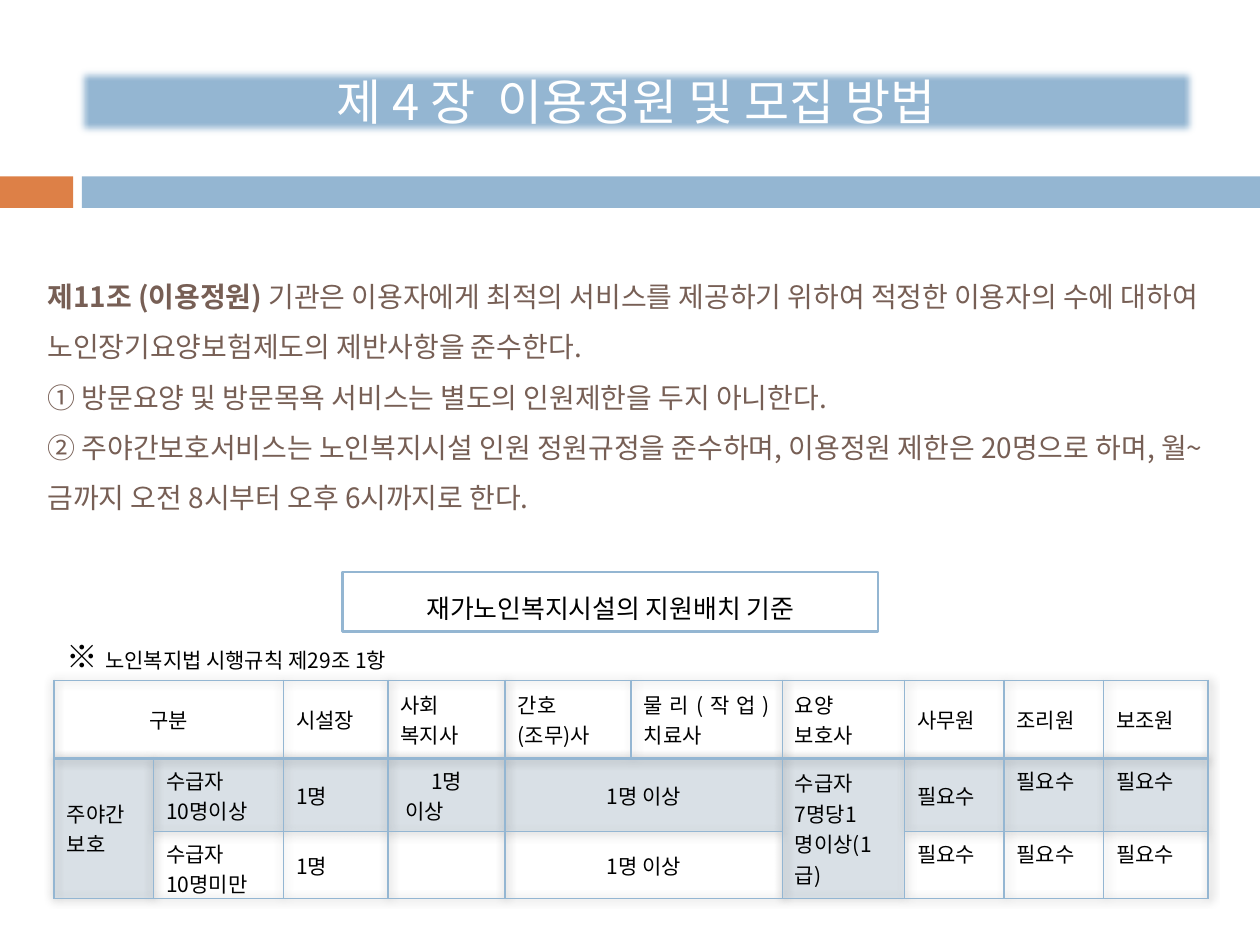
from lxml import etree
from pptx import Presentation
from pptx import util as u
from pptx.dml.color import RGBColor
from pptx.enum import shapes, text
from pptx.oxml.ns import qn

BLUE = RGBColor(0x94, 0xB6, 0xD2)
ORANGE = RGBColor(0xDD, 0x80, 0x47)
BROWN = RGBColor(0x77, 0x5F, 0x55)
BLACK = RGBColor(0, 0, 0)
WHITE = RGBColor(0xFF, 0xFF, 0xFF)
KOREAN = "Noto Sans CJK KR"
LEFT, CENTER, JUSTIFY = text.PP_ALIGN.LEFT, text.PP_ALIGN.CENTER, text.PP_ALIGN.JUSTIFY
TOP, MIDDLE = text.MSO_ANCHOR.TOP, text.MSO_ANCHOR.MIDDLE
NO_STYLE = "{2D5ABB26-0587-4C30-8999-92F81FD0307C}"

COLUMNS = [0.79, 1.03, 0.83, 0.93, 1, 1.2, 0.97, 0.79, 0.79, 0.83]
ROWS = [0.62, 0.58, 0.53]
HEADINGS = {0: "구분", 2: "시설장", 3: "사회\n복지사", 4: "간호\n(조무)사", 5: "물리(작업)치료사",
            6: "요양\n보호사", 7: "사무원", 8: "조리원", 9: "보조원"}
MERGES = [(0, 0, 0, 1), (1, 0, 2, 0), (1, 4, 1, 5), (2, 4, 2, 5), (1, 6, 2, 6)]
STAFFING = [
    (1, 0, "주야간\n보호", LEFT, MIDDLE),
    (1, 1, "수급자\n10명이상", LEFT, TOP),
    (1, 2, "1명", LEFT, MIDDLE),
    (1, 4, "1명 이상", CENTER, MIDDLE),
    (1, 6, "수급자\n7명당1명이상(1급)", LEFT, MIDDLE),
    (1, 7, "필요수", LEFT, MIDDLE),
    (1, 8, "필요수", LEFT, TOP),
    (1, 9, "필요수", LEFT, TOP),
    (2, 1, "수급자\n10명미만", LEFT, TOP),
    (2, 2, "1명", LEFT, MIDDLE),
    (2, 4, "1명 이상", CENTER, MIDDLE),
    (2, 7, "필요수", LEFT, TOP),
    (2, 8, "필요수", LEFT, TOP),
    (2, 9, "필요수", LEFT, TOP),
]


def inches(box):
    """Convert a box of numbers to lengths."""
    return [u.Inches(v) for v in box]


def add_run(p, words, size, color, bold=False, font=KOREAN):
    """Add one styled run to a paragraph."""
    r = p.add_run()
    r.text = words
    r.font.size, r.font.bold, r.font.name = u.Pt(size), bold, font
    r.font.color.rgb = color
    etree.SubElement(r.font._element, qn("a:ea"), typeface=font)


def add_rect(s, box, fill, line=None):
    """Add a flat rectangle."""
    sp = s.shapes.add_shape(shapes.MSO_SHAPE.RECTANGLE, *inches(box))
    sp.shadow.inherit = False
    sp.fill.solid()
    sp.fill.fore_color.rgb = fill
    if line is None:
        sp.line.fill.background()
    else:
        sp.line.color.rgb = line
        sp.line.width = u.Pt(1.5)
    return sp


def add_textbox(s, box, anchor):
    """Add a wrapping text box and return its text frame."""
    tf = s.shapes.add_textbox(*inches(box)).text_frame
    tf.word_wrap = True
    tf.vertical_anchor = anchor
    return tf


def add_stripe(s, left, top, width, height):
    """Draw the two-colour stripe under the chapter banner."""
    add_rect(s, (left, top, 0.58, height), ORANGE)
    add_rect(s, (left + 0.65, top, width - 0.65, height), BLUE)


def add_banner(s, box):
    """Draw the soft-edged chapter banner."""
    sp = add_rect(s, box, BLUE)
    effects = sp._element.spPr.find(qn("a:effectLst"))
    etree.SubElement(effects, qn("a:softEdge"), rad=str(u.Pt(5)))
    tf = sp.text_frame
    tf.vertical_anchor = MIDDLE
    p = tf.paragraphs[0]
    p.alignment = CENTER
    add_run(p, "제 4 장  이용정원 및 모집 방법", 28, WHITE)


def add_article(s, box):
    """Write the article with its two clauses."""
    p = add_textbox(s, box, MIDDLE).paragraphs[0]
    p.line_spacing = 1.5
    add_run(p, "제11조 (이용정원) ", 16, BROWN, bold=True)
    add_run(p, "기관은 이용자에게 최적의 서비스를 제공하기 위하여 적정한 이용자의 수에 "
               "대하여 노인장기요양보험제도의 제반사항을 준수한다.", 16, BROWN)
    for clause in (
        "① 방문요양 및 방문목욕 서비스는 별도의 인원제한을 두지 아니한다.",
        "② 주야간보호서비스는 노인복지시설 인원 정원규정을 준수하며, 이용정원 제한은 20명으로 "
        "하며, 월~금까지 오전 8시부터 오후 6시까지로 한다.",
    ):
        p.add_line_break()
        add_run(p, clause, 16, BROWN)


def add_caption(s, box):
    """Draw the framed table caption."""
    tf = add_rect(s, box, WHITE, BLUE).text_frame
    tf.vertical_anchor = MIDDLE
    p = tf.paragraphs[0]
    p.alignment, p.line_spacing = CENTER, 1.4
    add_run(p, "재가노인복지시설의 지원배치 기준", 14.8, BLACK)


def add_reference(s, box):
    """Write the legal reference above the table."""
    p = add_textbox(s, box, TOP).paragraphs[0]
    add_run(p, "※ ", 18, BLACK, font="Calibri")
    add_run(p, "노인복지법 시행규칙 제29조 1항", 12, BLACK)


def style_cell(cell, row):
    """Give a cell its borders and its fill."""
    props = cell._tc.get_or_add_tcPr()
    edges = {"lnL": 1, "lnR": 1, "lnT": 2 if row == 1 else 1, "lnB": 2 if row == 0 else 1}
    for tag, width in edges.items():
        line = etree.SubElement(props, qn(f"a:{tag}"), w=str(u.Pt(width)))
        fill = etree.SubElement(line, qn("a:solidFill"))
        etree.SubElement(fill, qn("a:srgbClr"), val=str(BLUE))
    if row == 1:
        cell.fill.solid()
        cell.fill.fore_color.rgb = BLUE
        etree.SubElement(props.find(qn("a:solidFill"))[0], qn("a:alpha"), val="20000")
    else:
        cell.fill.background()


def write_cell(cell, words, align, anchor):
    """Write one paragraph for each line of a cell."""
    cell.vertical_anchor = anchor
    tf = cell.text_frame
    for i, line in enumerate(words.split("\n")):
        p = tf.add_paragraph() if i else tf.paragraphs[0]
        p.alignment = align
        add_run(p, line, 12, BLACK)


def add_staff_table(s, box):
    """Build the staffing table."""
    table = s.shapes.add_table(len(ROWS), len(COLUMNS), *inches(box)).table
    table.first_row = table.horz_banding = False
    props = table._tbl.tblPr
    props.find(qn("a:tableStyleId")).text = NO_STYLE
    effects = etree.Element(qn("a:effectLst"))
    props.insert(0, effects)
    shadow = etree.SubElement(effects, qn("a:outerShdw"), blurRad=str(u.Pt(5)), dist="0", dir="0")
    color = etree.SubElement(shadow, qn("a:srgbClr"), val=str(BLACK))
    etree.SubElement(color, qn("a:alpha"), val="40000")
    for column, width in zip(table.columns, COLUMNS):
        column.width = u.Inches(width)
    for i, height in enumerate(ROWS):
        table.rows[i].height = u.Inches(height)
        for j in range(len(COLUMNS)):
            cell = table.cell(i, j)
            style_cell(cell, i)
            cell.text_frame.paragraphs[0].font.size = u.Pt(12)
    for top, left, bottom, right in MERGES:
        table.cell(top, left).merge(table.cell(bottom, right))
    for j, words in HEADINGS.items():
        write_cell(table.cell(0, j), words, JUSTIFY if j else CENTER, MIDDLE)
    for i, j, words, align, anchor in STAFFING:
        write_cell(table.cell(i, j), words, align, anchor)
    write_cell(table.cell(1, 3), "1명\n 이상", LEFT, MIDDLE)
    table.cell(1, 3).text_frame.paragraphs[0].alignment = CENTER
    table.cell(2, 1).margin_bottom = 0


def main():
    """Build the slide and save it."""
    prs = Presentation()
    prs.slide_width, prs.slide_height = u.Inches(10), u.Inches(7.5)
    s = prs.slides.add_slide(prs.slide_layouts[6])
    add_stripe(s, 0, 1.4, 10, 0.25)
    add_article(s, (0.28, 2.02, 9.37, 2.13))
    add_banner(s, (0.59, 0.52, 8.92, 0.57))
    add_caption(s, (2.72, 4.54, 4.25, 0.47))
    add_staff_table(s, (0.43, 5.4, 9.17, 1.73))
    add_reference(s, (0.43, 5.01, 2.99, 0.4))
    prs.save("out.pptx")


if __name__ == "__main__":
    main()
